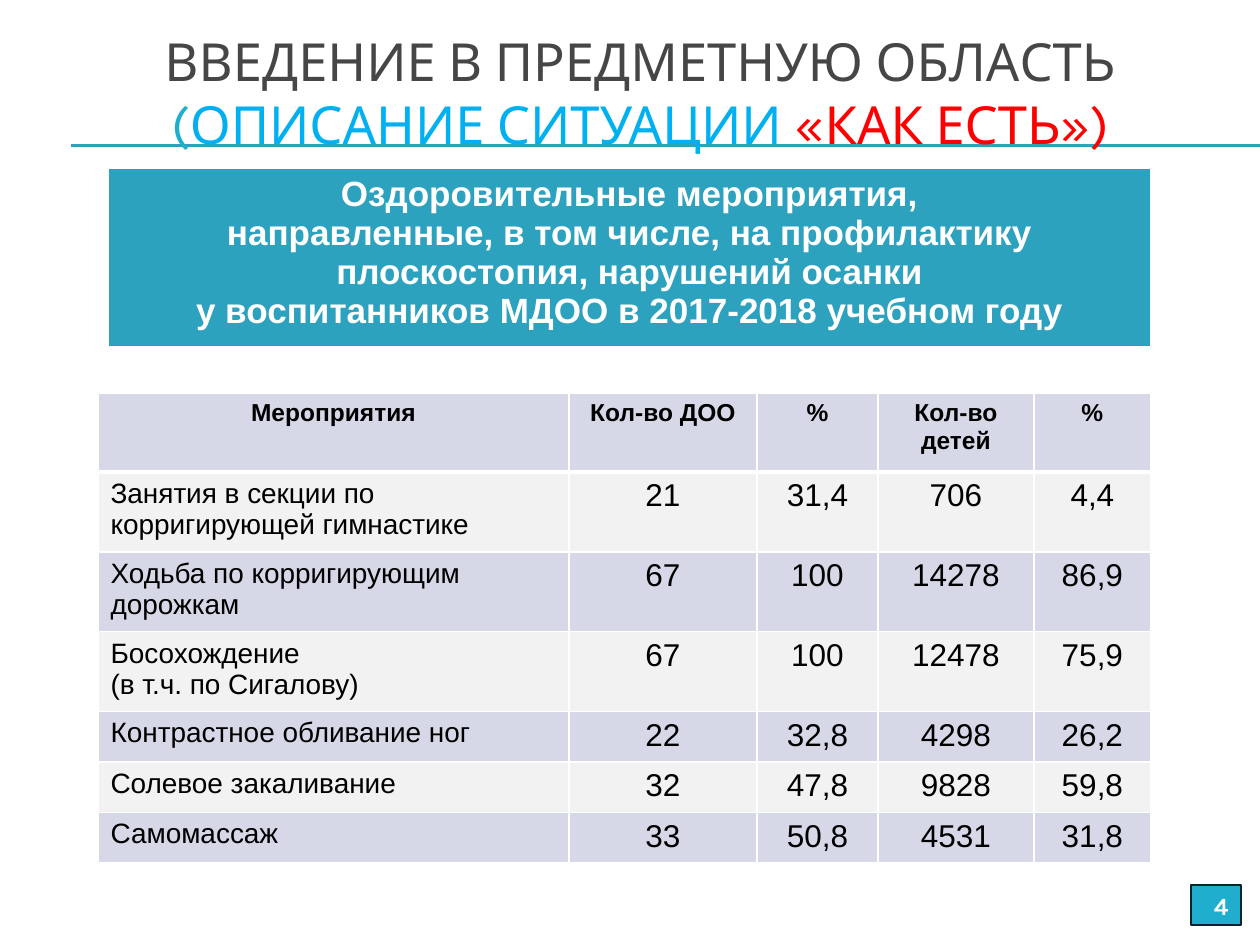
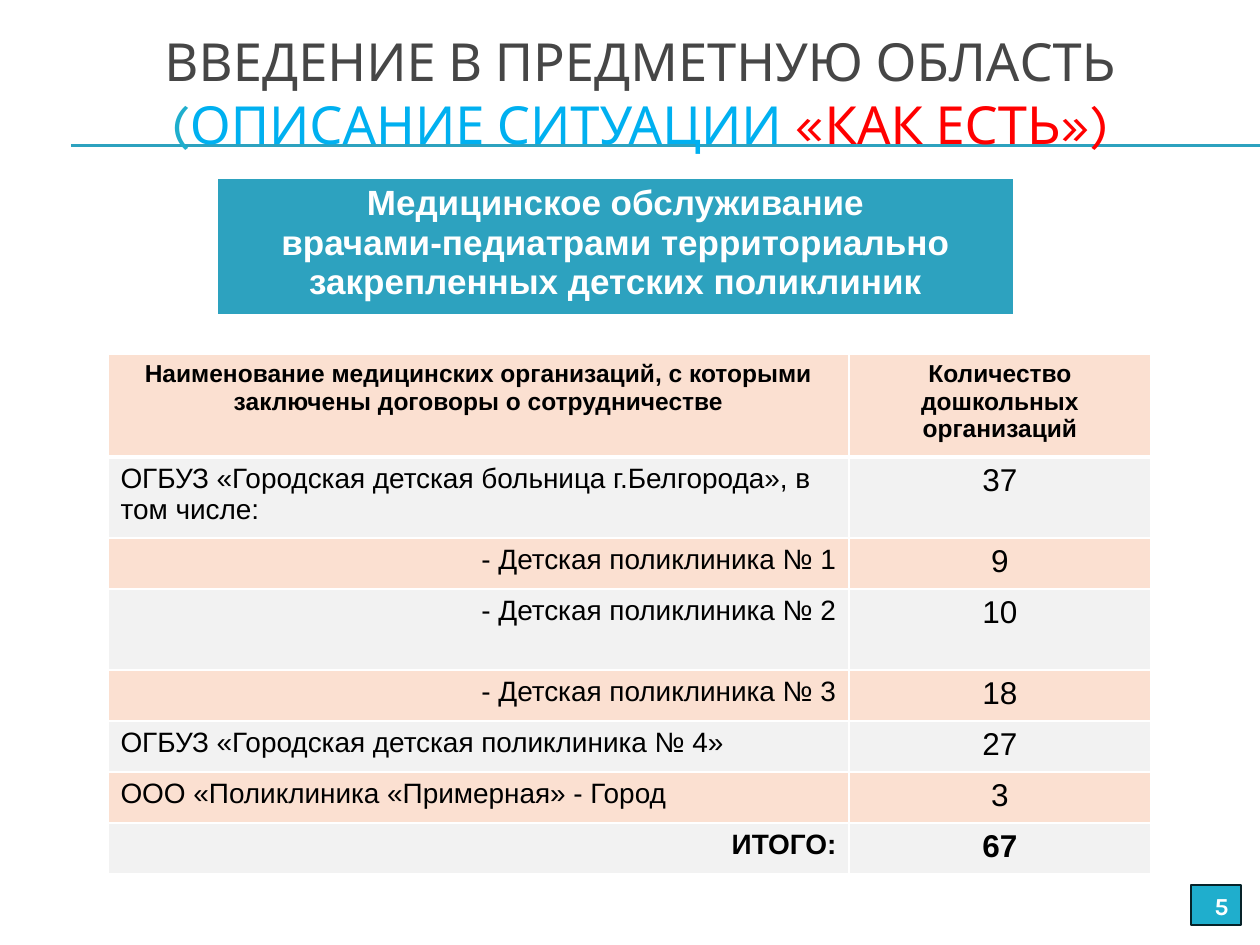
import lxml.etree
import pptx
import pptx.dml.color
import pptx.enum.shapes
import pptx.enum.text
import pptx.oxml.ns
import pptx.util

EMU_PER_PX = 914400 / 126
COLORS = {
    "white": "FFFFFF", "black": "000000", "heading": "464646",
    "teal": "2DA2BF", "cyan": "1FAECD", "sky": "00B0F0", "red": "FF0000",
    "outline": "062329", "gray": "F2F2F2", "lavender": "D7D8E7", "peach": "FBE0D1",
}
BODY_FONT, TITLE_FONT = "Arial", "Karla"
ALIGN = pptx.enum.text.PP_ALIGN
ANCHOR = pptx.enum.text.MSO_ANCHOR

TITLE_LINES = [
    [("ВВЕДЕНИЕ В ПРЕДМЕТНУЮ ОБЛАСТЬ", "heading")],
    [("(", "cyan"), ("ОПИСАНИЕ СИТУАЦИИ ", "sky"), ("«КАК ЕСТЬ»)", "red")],
]

HEALTH_ROWS = [
    ("Мероприятия", "Кол-во ДОО", "%", "Кол-во детей", "%"),
    ("Занятия в секции по корригирующей гимнастике", "21", "31,4", "706", "4,4"),
    ("Ходьба по корригирующим дорожкам", "67", "100", "14278", "86,9"),
    ("Босохождение\n(в т.ч. по Сигалову)", "67", "100", "12478", "75,9"),
    ("Контрастное обливание ног", "22", "32,8", "4298", "26,2"),
    ("Солевое закаливание", "32", "47,8", "9828", "59,8"),
    ("Самомассаж", "33", "50,8", "4531", "31,8"),
]

CLINIC_ROWS = [
    ("Наименование медицинских организаций, с которыми заключены договоры о сотрудничестве",
     "Количество дошкольных организаций"),
    ("ОГБУЗ «Городская детская больница г.Белгорода», в том числе:", "37"),
    ("- Детская поликлиника № 1", "9"),
    ("- Детская поликлиника № 2", "10"),
    ("- Детская поликлиника № 3", "18"),
    ("ОГБУЗ «Городская детская поликлиника № 4»", "27"),
    ("ООО «Поликлиника «Примерная» - Город", "3"),
    ("ИТОГО:", "67"),
]


def px(value):
    return pptx.util.Emu(round(value * EMU_PER_PX))


def rgb(name):
    return pptx.dml.color.RGBColor.from_string(COLORS[name])


class Deck:
    """Holds the shared style and the current slide."""

    def __init__(self):
        self.presentation = pptx.Presentation()
        self.presentation.slide_width = px(1260)
        self.presentation.slide_height = px(945)
        self.slide = None

    def add_slide(self, number):
        self.slide = self.presentation.slides.add_slide(self.presentation.slide_layouts[6])
        for y in (145, 146):
            self.rule(71, y, 1260)
        self.title()
        self.page_number(number)

    def format_run(self, run, size, color, font=BODY_FONT, bold=False):
        run.font.name = font
        run.font.size = pptx.util.Pt(size)
        run.font.bold = bold
        run.font.color.rgb = rgb(color)

    def format_text(self, text_frame, alignment, *style, **options):
        for paragraph in text_frame.paragraphs:
            paragraph.alignment = alignment
            for run in paragraph.runs:
                self.format_run(run, *style, **options)

    def rule(self, left, y, right):
        connector = self.slide.shapes.add_connector(
            pptx.enum.shapes.MSO_CONNECTOR.STRAIGHT, px(left), px(y), px(right), px(y))
        connector.line.color.rgb = rgb("teal")
        connector.line.width = pptx.util.Pt(0.75)
        properties = connector._element.spPr
        lxml.etree.SubElement(properties, pptx.oxml.ns.qn("a:effectLst"))

    def title(self):
        shape = self.slide.shapes.add_textbox(px(42), px(28), px(1197), px(128))
        text_frame = shape.text_frame
        text_frame.word_wrap = True
        text_frame.vertical_anchor = ANCHOR.MIDDLE
        text_frame.margin_top = text_frame.margin_bottom = 0
        paragraph = text_frame.paragraphs[0]
        paragraph.alignment = ALIGN.CENTER
        for index, line in enumerate(TITLE_LINES):
            if index:
                paragraph.add_line_break()
            for text, color in line:
                run = paragraph.add_run()
                run.text = text
                self.format_run(run, 30, color, TITLE_FONT)

    def page_number(self, number):
        shape = self.slide.shapes.add_shape(
            pptx.enum.shapes.MSO_SHAPE.RECTANGLE, px(1191), px(885), px(50), px(40))
        shape.shadow.inherit = False
        shape.fill.solid()
        shape.fill.fore_color.rgb = rgb("cyan")
        shape.line.color.rgb = rgb("outline")
        shape.line.width = pptx.util.Pt(0.75)
        shape.text_frame.text = str(number)
        shape.text_frame.vertical_anchor = ANCHOR.TOP
        self.format_text(shape.text_frame, ALIGN.RIGHT, 14, "white", font=TITLE_FONT, bold=True)

    def cell(self, cell, text, fill, alignment, size, color, bold, header):
        # Borders go before the fill in the cell properties
        properties = cell._tc.get_or_add_tcPr()
        for side in "LRTB":
            width = pptx.util.Pt(3 if header and side == "B" else 1)
            border = lxml.etree.SubElement(
                properties, pptx.oxml.ns.qn("a:ln" + side), w=str(width))
            solid = lxml.etree.SubElement(border, pptx.oxml.ns.qn("a:solidFill"))
            lxml.etree.SubElement(solid, pptx.oxml.ns.qn("a:srgbClr"), val=COLORS["white"])
        cell.fill.solid()
        cell.fill.fore_color.rgb = rgb(fill)
        cell.text_frame.text = text
        self.format_text(cell.text_frame, alignment, size, color, bold=bold)

    def grid(self, left, top, widths, heights):
        table = self.slide.shapes.add_table(
            len(heights), len(widths), px(left), px(top), px(sum(widths)), px(sum(heights))).table
        for column, width in zip(table.columns, widths):
            column.width = px(width)
        for row, height in zip(table.rows, heights):
            row.height = px(height)
        return table

    def banner(self, left, top, width, height, text):
        table = self.grid(left, top, [width], [height])
        self.cell(table.cell(0, 0), text, "teal", ALIGN.CENTER, 20, "white", True, True)

    def data_table(self, left, top, widths, heights, rows, band):
        table = self.grid(left, top, widths, heights)
        for row_index, row in enumerate(rows):
            header = row_index == 0
            total = row[0] == "ИТОГО:"
            fill = "gray" if row_index % 2 else band
            for column_index, text in enumerate(row):
                if header or column_index:
                    alignment = ALIGN.CENTER
                elif total or text.startswith("- "):
                    alignment = ALIGN.RIGHT
                else:
                    alignment = ALIGN.LEFT
                size = 14 if header else 18 if column_index else 16
                self.cell(table.cell(row_index, column_index), text, fill,
                          alignment, size, "black", header or total, header)


def main():
    deck = Deck()

    # Health measures
    deck.add_slide(4)
    deck.banner(108, 168, 1043, 169,
                "Оздоровительные мероприятия,\n"
                "направленные, в том числе, на профилактику плоскостопия, нарушений осанки\n"
                "у воспитанников МДОО в 2017-2018 учебном году")
    deck.data_table(98, 393, [471, 188, 121, 156, 117], [79, 79, 75, 75, 48, 48, 48],
                    HEALTH_ROWS, "lavender")

    # Medical service by clinics
    deck.add_slide(5)
    deck.banner(217, 178, 797, 130,
                "Медицинское обслуживание\n"
                "врачами-педиатрами территориально закрепленных детских поликлиник")
    deck.data_table(108, 354, [741, 302], [103, 81, 51, 81, 51, 51, 51, 51],
                    CLINIC_ROWS, "peach")

    deck.presentation.save("out.pptx")


if __name__ == "__main__":
    main()
